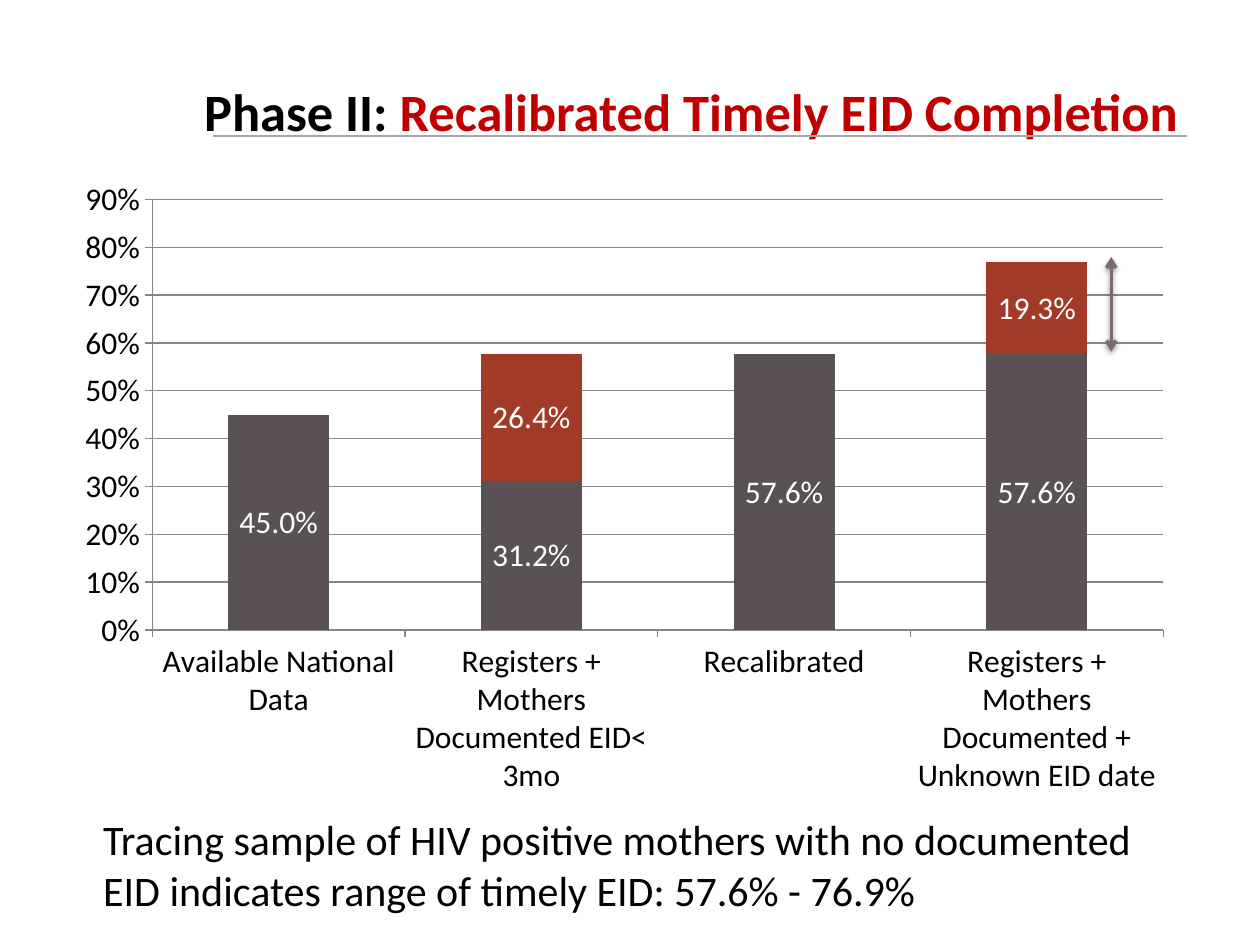
from lxml import etree
from pptx import Presentation
from pptx.chart.data import CategoryChartData as Data
from pptx.dml.color import RGBColor as Color
from pptx.enum.chart import XL_CHART_TYPE as Kind, XL_LABEL_POSITION as Spot, XL_TICK_MARK as Tick
from pptx.enum.shapes import MSO_CONNECTOR as Link
from pptx.enum.text import MSO_ANCHOR as Anchor, PP_ALIGN as Align
from pptx.oxml.ns import qn
from pptx.util import Inches, Pt

FONT = "Calibri"
GRAY, RED, GRID = "5A5155", "A23A28", "868686"


def tint(form, hue):
    """Set a colour format or a fill to a hex colour."""
    if hasattr(form, "solid"):
        form.solid()
        form = form.fore_color
    form.rgb = Color.from_string(hue)


def style(font, size, hue="000000", bold=False):
    """Set the look of a font."""
    font.name, font.size, font.bold = FONT, Pt(size), bold
    tint(font.color, hue)


def write(shape, parts, box, size, left=0.1, top=0.05, bold=False):
    """Place a shape and fill it with one paragraph of coloured parts."""
    shape.left, shape.top, shape.width, shape.height = map(Inches, box)
    frame = shape.text_frame
    frame.word_wrap = True
    frame.vertical_anchor = Anchor.TOP
    frame.margin_left, frame.margin_top = Inches(left), Inches(top)
    para = frame.paragraphs[0]
    para.alignment = Align.LEFT
    for text, hue in parts:
        run = para.add_run()
        run.text = text
        style(run.font, size, hue, bold)


def draw_line(slide, start, end, hue, width, arrows=False):
    """Draw a line, or a double arrow with a soft shadow."""
    ends = map(Inches, (*start, *end))
    line = slide.shapes.add_connector(Link.STRAIGHT, *ends)
    tint(line.line.fill, hue)
    line.line.width = Pt(width)
    props = line._element.spPr
    glow = etree.SubElement(props, qn("a:effectLst"))
    if arrows:
        for tag in ("a:headEnd", "a:tailEnd"):
            etree.SubElement(props.find(qn("a:ln")), qn(tag), type="arrow")
        shade = etree.SubElement(glow, qn("a:outerShdw"), blurRad=str(Pt(3.1)),
                                 dist=str(Pt(1.6)), dir="5400000", rotWithShape="0")
        base = etree.SubElement(shade, qn("a:srgbClr"), val="000000")
        etree.SubElement(base, qn("a:alpha"), val="38000")


def draw_chart(slide, cats, rows, box):
    """Draw the stacked columns with white value labels."""
    data = Data(number_format="0.0%")
    data.categories = cats
    for name, vals, _ in rows:
        data.add_series(name, vals)
    chart = slide.shapes.add_chart(Kind.COLUMN_STACKED, *map(Inches, box), data).chart
    chart.has_legend = chart.has_title = False
    style(chart.font, 18)
    plot = chart.plots[0]
    plot.gap_width, plot.overlap, plot.vary_by_categories = 150, 100, False
    for series, (_, _, hue) in zip(plot.series, rows):
        tint(series.format.fill, hue)
        labels = series.data_labels
        labels.show_value = True
        labels.position = Spot.CENTER
        labels.number_format, labels.number_format_is_linked = "0.0%", False
        style(labels.font, 18, "FFFFFF")
    axis = chart.value_axis
    axis.minimum_scale, axis.maximum_scale, axis.major_unit = 0, 0.9, 0.1
    axis.tick_labels.number_format = "0%"
    axis.tick_labels.number_format_is_linked = False
    axis.has_major_gridlines = True
    for item in (axis, chart.category_axis):
        item.major_tick_mark = Tick.OUTSIDE
    for item in (axis, chart.category_axis, axis.major_gridlines):
        tint(item.format.line.fill, GRID)
        item.format.line.width = Pt(0.75)


def main():
    """Build the slide and save it."""
    deck = Presentation()
    deck.slide_width, deck.slide_height = Inches(10), Inches(7.5)
    slide = deck.slides.add_slide(deck.slide_layouts[5])
    title = [("Phase II: ", "000000"), ("Recalibrated Timely EID Completion", "C00000")]
    write(slide.shapes.title, title, (1.33, -0.03, 9.03, 1.53), 30,
          left=0.29, top=0.66, bold=True)
    draw_line(slide, (1.69, 1.08), (9.42, 1.08), "A6A6A6", 1.25)
    cats = ["Available National Data", "Registers + Mothers Documented EID< 3mo",
            "Recalibrated", "Registers + Mothers Documented + Unknown EID date"]
    rows = [("Series 1", (0.45, 0.312, 0.576, 0.576), GRAY),
            ("Series 2", (None, 0.264, None, 0.193), RED)]
    draw_chart(slide, cats, rows, (0.5, 1.33, 8.91, 5.08))
    draw_line(slide, (8.82, 2.04), (8.82, 2.79), "786C71", 2, arrows=True)
    note = ("Tracing sample of HIV positive mothers with no documented EID "
            "indicates range of timely EID: 57.6% - 76.9%")
    area = slide.shapes.add_textbox(0, 0, 0, 0)
    write(area, [(note, "000000")], (0.72, 6, 8.69, 1.31), 24, top=0.46)
    deck.save("out.pptx")


if __name__ == "__main__":
    main()
